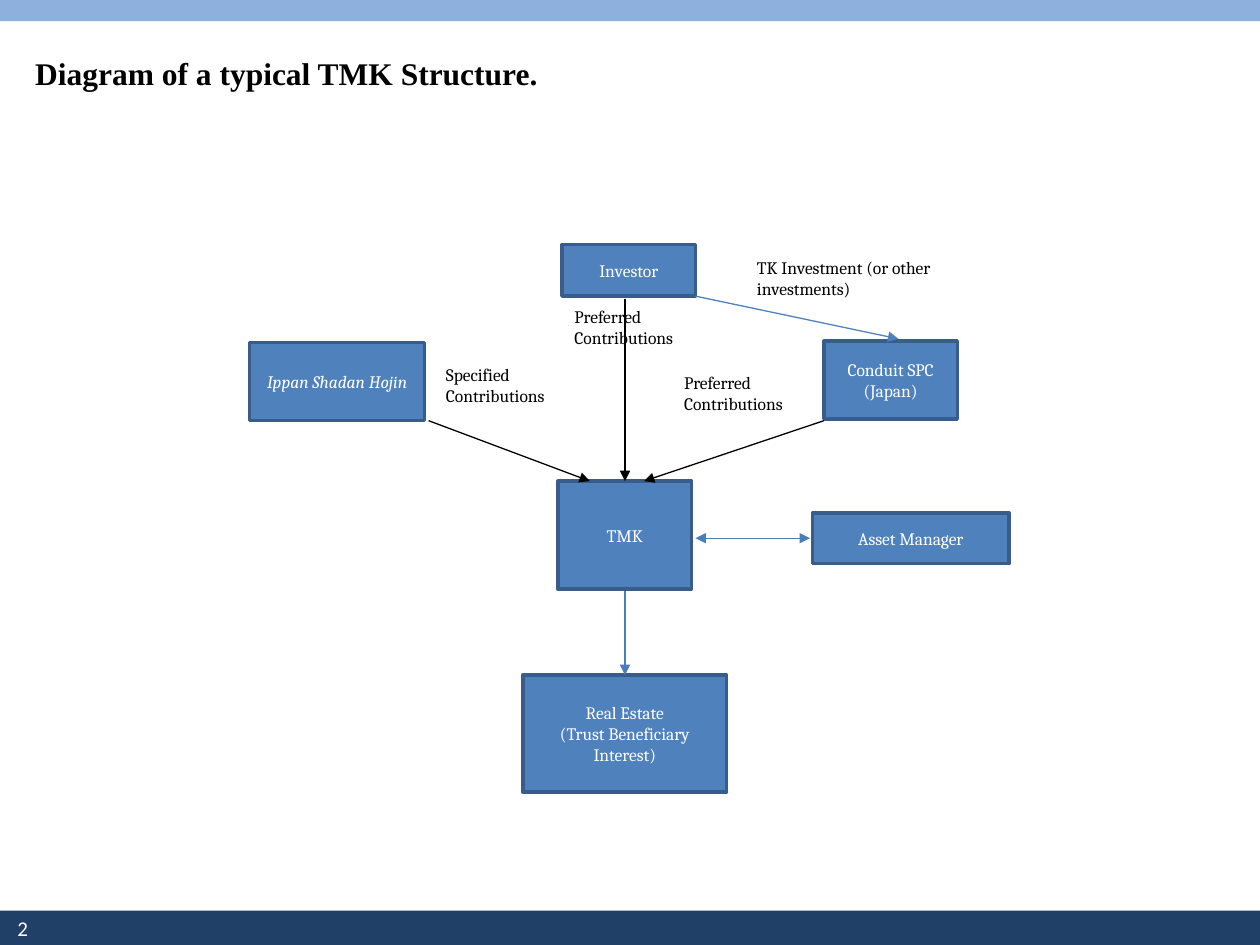
from typing import NamedTuple

from lxml import etree
from pptx import Presentation
from pptx.dml.color import RGBColor
from pptx.enum import shapes, text
from pptx.oxml.ns import qn
from pptx.util import Cm, Pt

BLACK, WHITE = "000000", "FFFFFF"
BLUE, EDGE, LINK = "4F81BD", "385D8A", "4A7EBB"
MID = 12.6  # centre line of the middle column
TOP = 9.7  # top edge of the TMK box


class Area(NamedTuple):
    left: float
    top: float
    width: float
    height: float


class Node(NamedTuple):
    words: str
    area: Area
    italic: bool = False


class Label(NamedTuple):
    words: str
    area: Area


class Arrow(NamedTuple):
    start: tuple[float, float]
    end: tuple[float, float]
    color: str
    both: bool = False


NODES = [
    Node("TMK", Area(11.25, TOP, 2.69, 2.18)),
    Node("Investor", Area(11.33, 4.93, 2.69, 1.04)),
    Node("Real Estate\n(Trust Beneficiary Interest)", Area(10.54, 13.61, 4.11, 2.36)),
    Node("Asset Manager", Area(16.38, 10.34, 3.96, 1.02)),
    Node("Ippan Shadan Hojin", Area(5.03, 6.91, 3.53, 1.57), italic=True),
    Node("Conduit SPC\n(Japan)", Area(16.61, 6.88, 2.69, 1.57)),
]
LABELS = [
    Label("Specified Contributions", Area(8.74, 7.21, 3.05, 1.27)),
    Label("Preferred Contributions", Area(13.54, 7.37, 2.84, 1.27)),
    Label("TK Investment (or other investments)", Area(15.01, 5.05, 4.93, 1.27)),
    Label("Preferred Contributions", Area(11.33, 6.05, 3.05, 1.32)),
]
ARROWS = [
    Arrow((16.61, 8.48), (12.98, TOP), BLACK),
    Arrow((MID, 6.02), (MID, TOP), BLACK),
    Arrow((8.64, 8.48), (11.89, TOP), BLACK),
    Arrow((14.02, 5.97), (18.11, 6.83), BLUE),
    Arrow((14.02, 10.85), (16.33, 10.85), LINK, both=True),
    Arrow((MID, 11.91), (MID, 13.61), LINK),
]


def paint(form, color: str) -> None:
    """Give a fill or font colour format a solid colour."""
    form.rgb = RGBColor.from_string(color)


def write(shape, words: str, color: str, size: float = 10, face: str = "Cambria",
          bold: bool = False, italic: bool = False, align=text.PP_ALIGN.LEFT,
          anchor=text.MSO_ANCHOR.TOP) -> None:
    frame = shape.text_frame
    frame.word_wrap = True
    frame.vertical_anchor = anchor
    frame.text = words
    for para in frame.paragraphs:
        para.alignment = align
        font = para.font
        font.name, font.size = face, Pt(size)
        font.bold, font.italic = bold, italic
        paint(font.color, color)


def add_box(slide, area: Area, fill: str, edge: str | None = None):
    box = slide.shapes.add_shape(shapes.MSO_SHAPE.RECTANGLE, *map(Cm, area))
    box.shadow.inherit = False
    box.fill.solid()
    paint(box.fill.fore_color, fill)
    if edge:
        box.line.width = Pt(2)
        paint(box.line.color, edge)
    else:
        box.line.fill.background()
    return box


def add_node(slide, node: Node) -> None:
    box = add_box(slide, node.area, BLUE, EDGE)
    write(box, node.words, WHITE, italic=node.italic,
          align=text.PP_ALIGN.CENTER, anchor=text.MSO_ANCHOR.MIDDLE)


def add_text(slide, area: Area):
    return slide.shapes.add_textbox(*map(Cm, area))


def add_arrow(slide, arrow: Arrow) -> None:
    link = slide.shapes.add_connector(
        shapes.MSO_CONNECTOR.STRAIGHT, *map(Cm, arrow.start + arrow.end))
    link.line.width = Pt(0.75)
    paint(link.line.color, arrow.color)
    ends = ["headEnd", "tailEnd"] if arrow.both else ["tailEnd"]
    for end in ends:
        etree.SubElement(link.line._get_or_add_ln(), qn(f"a:{end}"), type="triangle")
    etree.SubElement(link._element.spPr, qn("a:effectLst"))


def main() -> None:
    deck = Presentation()
    deck.slide_width, deck.slide_height = Cm(25.4), Cm(19.05)
    slide = deck.slides.add_slide(deck.slide_layouts[6])

    add_box(slide, Area(0, 0, 25.4, 0.43), "8DB0DC")
    add_box(slide, Area(0, 18.36, 25.4, 0.69), "204068")

    title = add_text(slide, Area(0.71, 1.09, 24, 0.76))
    frame = title.text_frame
    frame.margin_left = frame.margin_right = frame.margin_top = frame.margin_bottom = 0
    write(title, "Diagram of a typical TMK Structure.", BLACK, 18,
          "Times New Roman", bold=True)
    number = add_text(slide, Area(0.1, 18.21, 5.92, 1.02))
    write(number, "2", WHITE, 12, "Calibri", anchor=text.MSO_ANCHOR.MIDDLE)

    for node in NODES:
        add_node(slide, node)
    for label in LABELS:
        write(add_text(slide, label.area), label.words, BLACK)
    for arrow in ARROWS:
        add_arrow(slide, arrow)
    deck.save("out.pptx")


if __name__ == "__main__":
    main()
